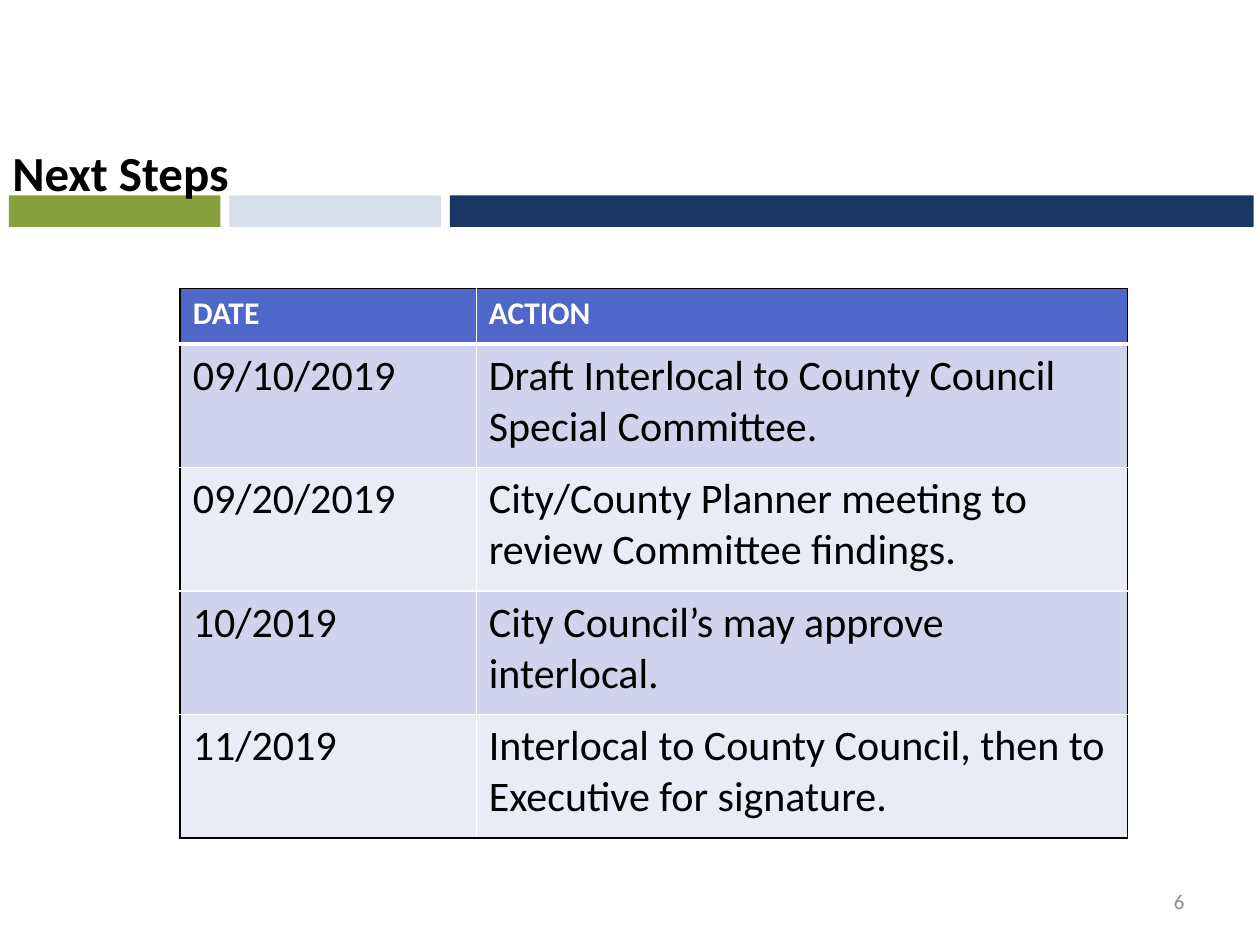
import pptx
import pptx.dml.color
import pptx.enum.shapes
import pptx.enum.text
import pptx.oxml
import pptx.oxml.ns
import pptx.util
from dataclasses import dataclass

Inches = pptx.util.Inches
ALIGN = pptx.enum.text.PP_ALIGN
ANCHOR = pptx.enum.text.MSO_ANCHOR


@dataclass(frozen=True)
class Theme:
    font: str = "Calibri"
    black: str = "000000"
    white: str = "FFFFFF"
    gray: str = "8C8C8C"
    green: str = "86A13C"
    pale: str = "D7DEEA"
    navy: str = "1A3662"
    header: str = "4E67C8"
    bands: tuple = ("D0D3EB", "E9EBF5")
    title_size: int = 28
    header_size: int = 18
    body_size: int = 24
    number_size: int = 12


def rgb(color):
    return pptx.dml.color.RGBColor.from_string(color)


def write_text(tf, text, *, font, size, color, bold=False, align=ALIGN.LEFT):
    p = tf.paragraphs[0]
    p.alignment = align
    r = p.add_run()
    r.text = text
    r.font.name = font
    r.font.size = pptx.util.Pt(size)
    r.font.bold = bold
    r.font.color.rgb = rgb(color)


def set_borders(cell, borders):
    """Draw the cell's edges; borders maps L, R, T, B to (color, points)."""
    tcPr = cell._tc.get_or_add_tcPr()
    for i, side in enumerate("LRTB"):
        color, width = borders[side]
        ln = pptx.oxml.parse_xml(
            f'<a:ln{side} {pptx.oxml.ns.nsdecls("a")} w="{pptx.util.Pt(width)}">'
            f'<a:solidFill><a:srgbClr val="{color}"/></a:solidFill></a:ln{side}>'
        )
        tcPr.insert(i, ln)


class SlideBuilder:
    def __init__(self, slide, theme):
        self.s = slide
        self.theme = theme

    def bar(self, left, top, width, height, color):
        sp = self.s.shapes.add_shape(
            pptx.enum.shapes.MSO_SHAPE.RECTANGLE,
            Inches(left), Inches(top), Inches(width), Inches(height))
        sp.shadow.inherit = False
        sp.fill.solid()
        sp.fill.fore_color.rgb = rgb(color)
        sp.line.fill.background()

    def text(self, left, top, width, height, text, anchor, **style):
        sp = self.s.shapes.add_textbox(
            Inches(left), Inches(top), Inches(width), Inches(height))
        tf = sp.text_frame
        tf.word_wrap = True
        tf.vertical_anchor = anchor
        write_text(tf, text, font=self.theme.font, **style)

    def table(self, left, top, col_widths, row_heights, rows):
        """Header row, banded body, black outline and white inner rules."""
        t = self.theme
        table = self.s.shapes.add_table(
            len(rows), len(col_widths), Inches(left), Inches(top),
            Inches(sum(col_widths)), Inches(sum(row_heights))).table
        for column, width in zip(table.columns, col_widths):
            column.width = Inches(width)
        for i, (row, height) in enumerate(zip(rows, row_heights)):
            table.rows[i].height = Inches(height)
            for j, text in enumerate(row):
                self.cell(table, i, j, text)

    def cell(self, table, i, j, text):
        t = self.theme
        cell = table.cell(i, j)
        is_header = i == 0
        cell.fill.solid()
        cell.fill.fore_color.rgb = rgb(t.header if is_header else t.bands[(i - 1) % 2])
        write_text(cell.text_frame, text, font=t.font, bold=is_header,
                   size=t.header_size if is_header else t.body_size,
                   color=t.white if is_header else t.black)
        outer, inner, header_rule = (t.black, 1), (t.white, 1), (t.white, 3)
        last_row, last_col = len(table.rows) - 1, len(table.columns) - 1
        set_borders(cell, {
            "L": outer if j == 0 else inner,
            "R": outer if j == last_col else inner,
            "T": outer if is_header else header_rule if i == 1 else inner,
            "B": outer if i == last_row else header_rule if is_header else inner,
        })


def main():
    prs = pptx.Presentation()
    prs.slide_width, prs.slide_height = Inches(10), Inches(7.5)
    theme = Theme()
    slide = SlideBuilder(prs.slides.add_slide(prs.slide_layouts[6]), theme)

    left, gap = 0.07, 0.07
    for width, color in ((1.68, theme.green), (1.68, theme.pale), (6.38, theme.navy)):
        slide.bar(left, 1.55, width, 0.25, color)
        left += width + gap

    slide.text(0, 0.15, 9.44, 1.5, "Next Steps", ANCHOR.BOTTOM,
               size=theme.title_size, color=theme.black, bold=True)
    slide.text(7.17, 6.95, 2.33, 0.4, "6", ANCHOR.MIDDLE,
               size=theme.number_size, color=theme.gray, align=ALIGN.RIGHT)

    rows = [
        ("DATE", "ACTION"),
        ("09/10/2019", "Draft Interlocal to County Council Special Committee."),
        ("09/20/2019", "City/County Planner meeting to review Committee findings."),
        ("10/2019", "City Council’s may approve interlocal."),
        ("11/2019", "Interlocal to County Council, then to Executive for signature."),
    ]
    slide.table(1.43, 2.29, (2.35, 5.17), [0.44] + [0.98] * 4, rows)
    prs.save("out.pptx")


if __name__ == "__main__":
    main()
